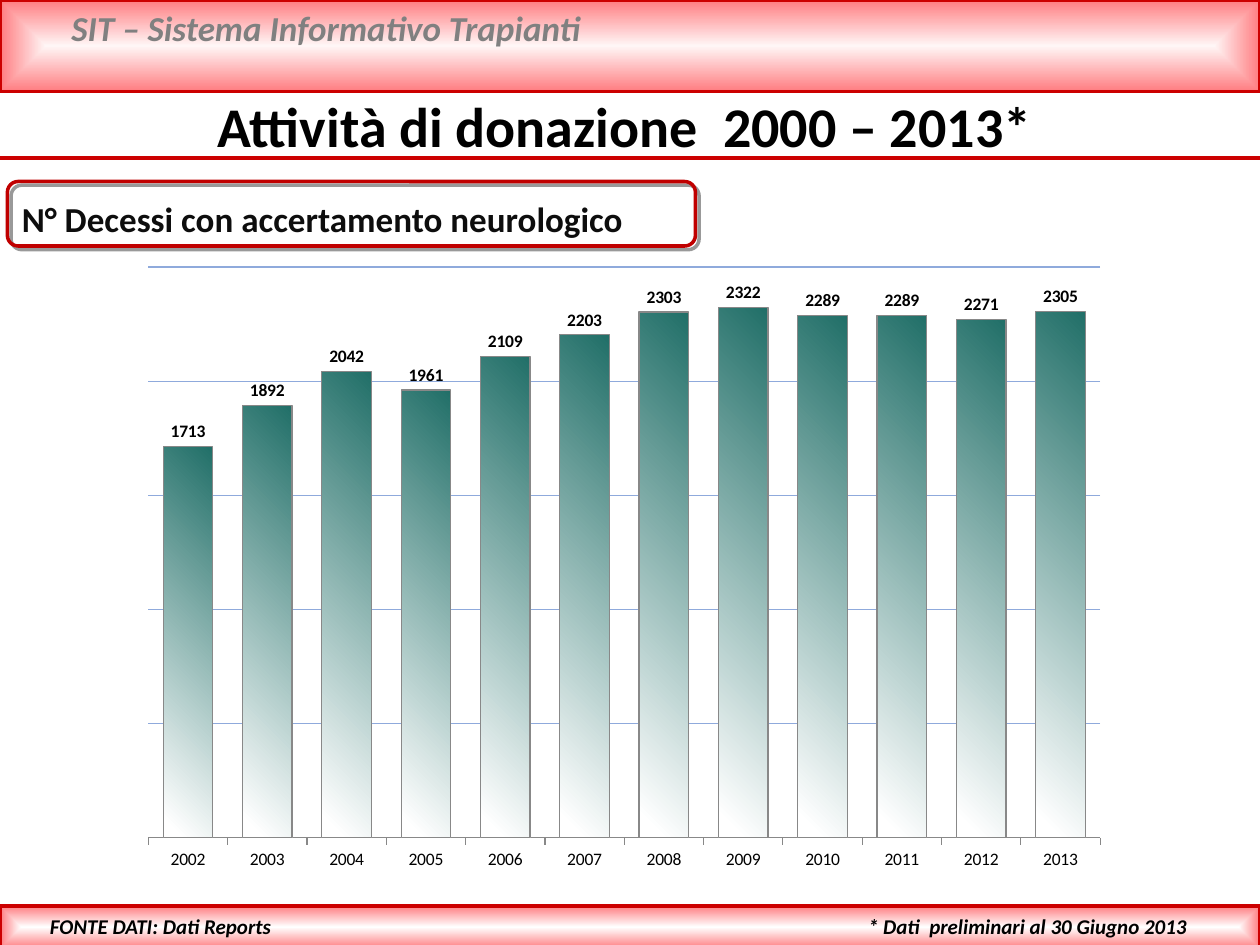
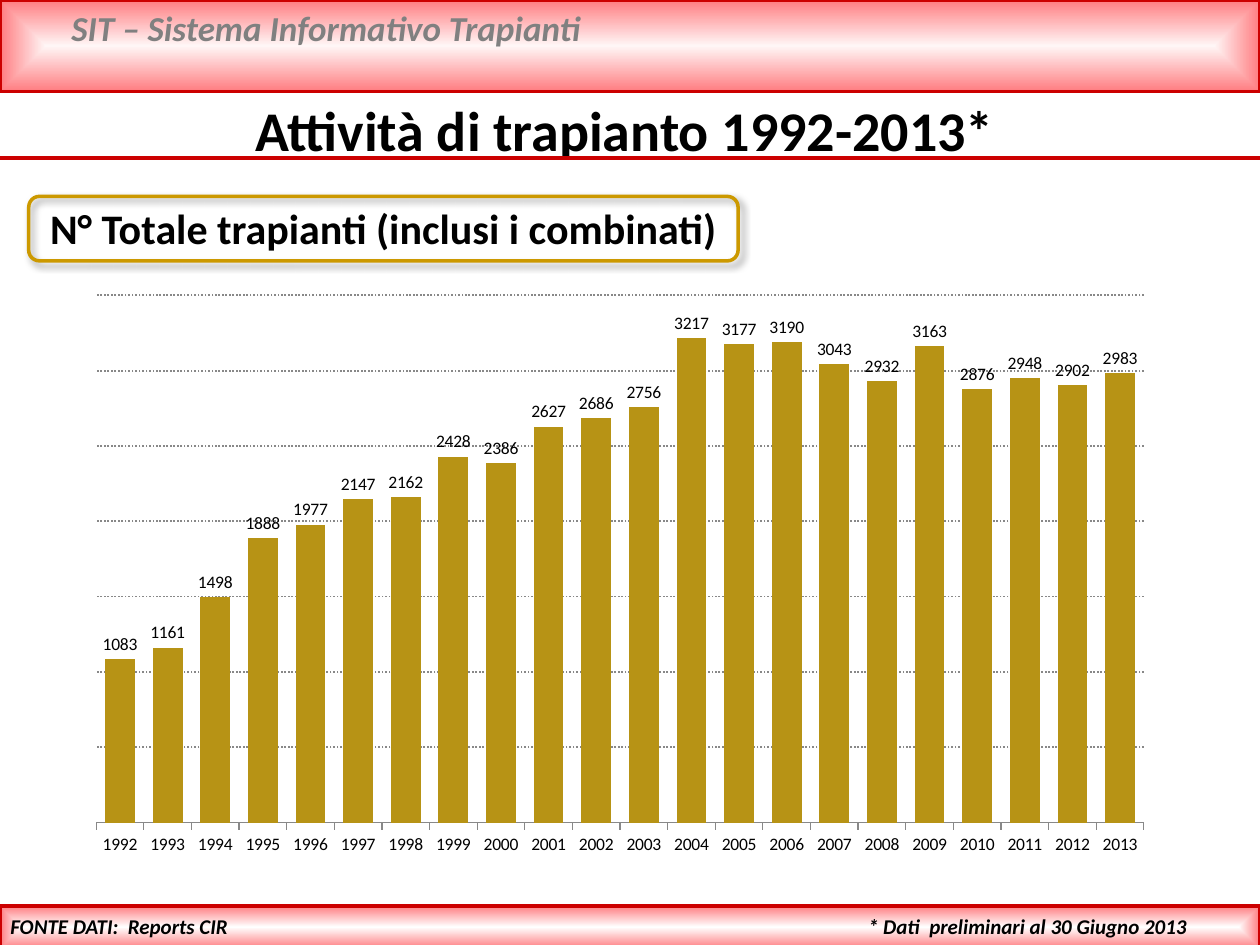
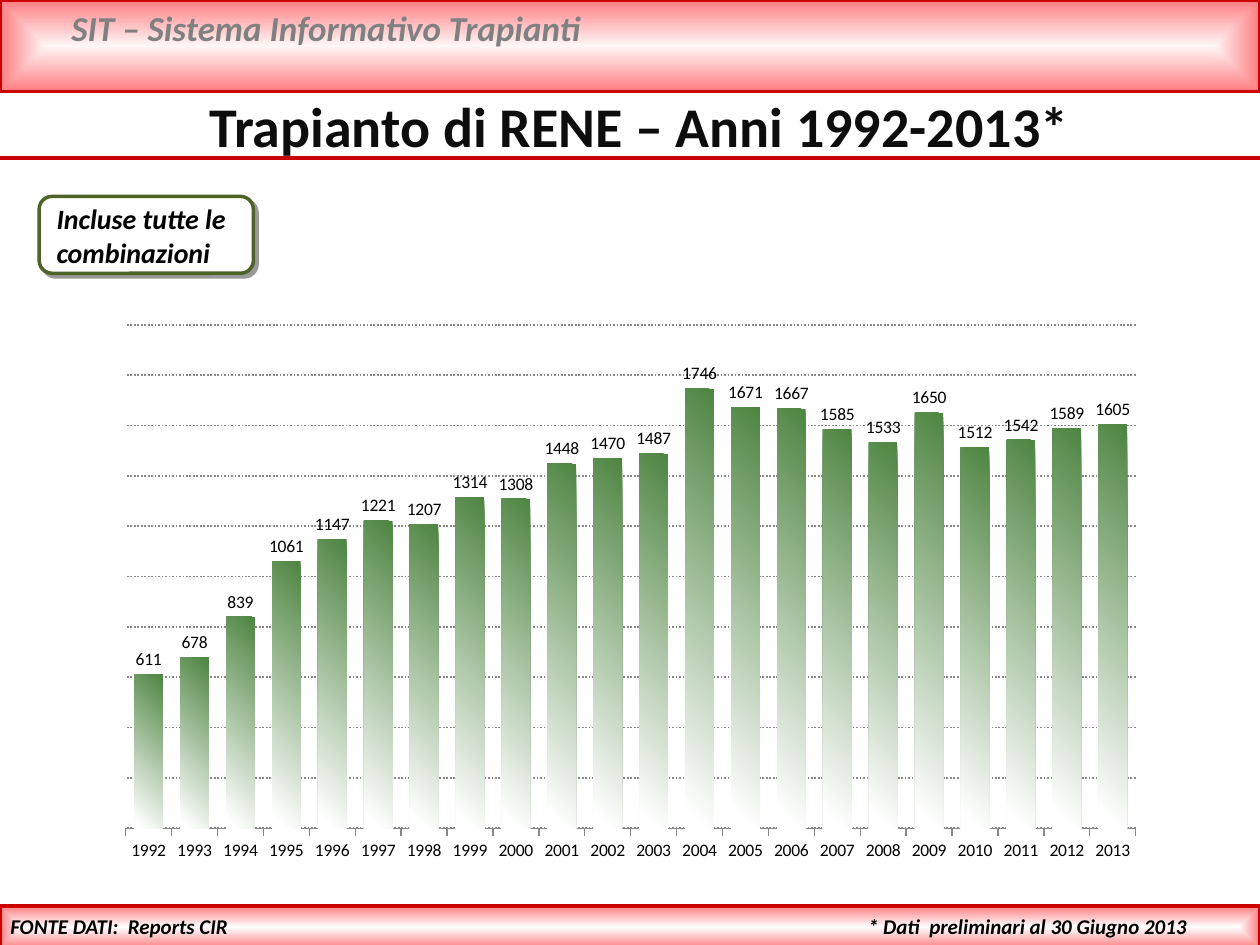
from lxml.etree import SubElement
from pptx import Presentation
from pptx.chart.data import CategoryChartData
from pptx.dml.color import RGBColor
from pptx.enum.chart import XL_CHART_TYPE as ChartType, XL_LABEL_POSITION as LabelPosition
from pptx.enum.chart import XL_TICK_MARK as TickMark
from pptx.enum.dml import MSO_LINE as Dash
from pptx.enum.shapes import MSO_CONNECTOR as Connector, MSO_SHAPE as Shape
from pptx.enum.text import MSO_ANCHOR as Anchor, MSO_AUTO_SIZE as AutoSize, PP_ALIGN as Align
from pptx.oxml import parse_xml
from pptx.oxml.ns import nsdecls, qn
from pptx.util import Cm, Pt

FONT = "Calibri"
COLORS = {
    "black": "000000", "ink": "0D0D0D", "white": "FFFFFF",
    "header": "808080", "red": "CC0000", "rose": "FF7C80", "blush": "FFF6F6",
    "frame_red": "C00000", "frame_gold": "CC9900", "frame_green": "4F6228",
    "teal": "216F68", "gold": "B79315", "green": "4E8542",
    "axis": "888888", "grid_blue": "8FAADC",
}
TITLE_ONLY = 5
PAGE_WIDTH, PAGE_HEIGHT = 25.4, 19.05


def rgb(name):
    return RGBColor.from_string(COLORS[name])


def place(at):
    return [Cm(length) for length in at]


def style_line(line, color, width):
    line.color.rgb = rgb(color)
    line.width = Pt(width)


def set_gradient(fill, start, end, end_position=1.0):
    fill.gradient()
    for stop, color, position in zip(fill.gradient_stops, (start, end), (0, end_position)):
        stop.color.rgb = rgb(color)
        stop.position = position


def write(frame, text, size, color="black", bold=True, italic=False, align=Align.LEFT):
    para = frame.paragraphs[0]
    para.alignment = align
    span = para.add_run()
    span.text = text
    font = span.font
    font.name, font.size, font.bold, font.italic = FONT, Pt(size), bold, italic
    font.color.rgb = rgb(color)


def add_text(page, at, text, size, wrap=True, anchor=Anchor.TOP, **style):
    frame = page.shapes.add_textbox(*place(at)).text_frame
    frame.word_wrap = wrap
    frame.vertical_anchor = anchor
    write(frame, text, size, **style)


def add_band(page, top, height, center):
    """Full-width band, light in the middle and rose at its edges."""
    band = page.shapes.add_shape(Shape.RECTANGLE, *place((0, top, PAGE_WIDTH, height)))
    band.shadow.inherit = False
    set_gradient(band.fill, center, "rose")
    style_line(band.line, "red", 2)
    gradient = band.fill._xPr.find(qn("a:gradFill"))
    gradient.remove(gradient.find(qn("a:lin")))
    gradient.append(parse_xml(
        f'<a:path {nsdecls("a")} path="shape">'
        '<a:fillToRect l="50000" t="50000" r="50000" b="50000"/></a:path>'))


def add_rule(page, top):
    rule = page.shapes.add_connector(Connector.STRAIGHT, *place((0, top, PAGE_WIDTH, top)))
    style_line(rule.line, "red", 2)
    SubElement(rule._element.spPr, qn("a:effectLst"))


def add_frame(page, at, color, blur=0, fill=None):
    """Rounded outline with a shadow to the lower right."""
    box = page.shapes.add_shape(Shape.ROUNDED_RECTANGLE, *place(at))
    box.shadow.inherit = False
    if fill:
        box.fill.solid()
        box.fill.fore_color.rgb = rgb(fill)
    else:
        box.fill.background()
    style_line(box.line, color, 2)
    box._element.spPr.find(qn("a:effectLst")).append(parse_xml(
        f'<a:outerShdw {nsdecls("a")} blurRad="{Pt(blur)}" dist="{Pt(3)}" dir="2700000" '
        f'algn="tl" rotWithShape="0"><a:srgbClr val="{COLORS["black"]}">'
        '<a:alpha val="40000"/></a:srgbClr></a:outerShdw>'))


def start_page(deck, title, title_at, source, source_at, title_color="black"):
    """Page with the shared bands, rule, header, footer and title."""
    page = deck.slides.add_slide(deck.slide_layouts[TITLE_ONLY])
    add_band(page, 0, 1.85, "blush")
    add_text(page, (1.19, 0, 22.81, 1.12), "SIT – Sistema Informativo Trapianti", 20,
             color="header", italic=True)
    add_band(page, 18.26, 0.86, "white")
    add_rule(page, 3.18)
    add_text(page, (17.25, 18.29, 8.15, 0.76), "* Dati  preliminari al 30 Giugno 2013", 12,
             italic=True)
    add_text(page, source_at, source, 12, wrap=False, italic=True, align=Align.RIGHT)

    heading = page.shapes.title
    heading.left, heading.top, heading.width, heading.height = place(title_at)
    heading.text_frame.auto_size = AutoSize.NONE
    heading.text_frame.vertical_anchor = Anchor.MIDDLE
    write(heading.text_frame, title, 32, color=title_color, align=Align.CENTER)
    return page


def set_plot_area(chart):
    layout = "".join(f'<c:{key} val="{value}"/>' for key, value in (
        ("layoutTarget", "inner"), ("xMode", "edge"), ("yMode", "edge"),
        ("x", 0.02), ("y", 0.02), ("w", 0.96), ("h", 0.9)))
    plot_area = chart._chartSpace.chart.plotArea
    for old in plot_area.findall(qn("c:layout")):
        plot_area.remove(old)
    plot_area.insert(0, parse_xml(
        f'<c:layout {nsdecls("c")}><c:manualLayout>{layout}</c:manualLayout></c:layout>'))


def add_columns(page, at, first_year, values, top_value, step, color, fade=True,
                outlined=False, bold_labels=False, grid=("axis", 1, Dash.ROUND_DOT)):
    data = CategoryChartData()
    data.categories = [str(first_year + index) for index in range(len(values))]
    data.add_series("Series 1", values)
    chart = page.shapes.add_chart(ChartType.COLUMN_CLUSTERED, *place(at), data).chart
    chart.has_legend = chart.has_title = False
    chart.font.name, chart.font.size = FONT, Pt(10)
    chart.font.color.rgb = rgb("black")
    set_plot_area(chart)

    # Axes
    style_line(chart.category_axis.format.line, "axis", 0.75)
    chart.category_axis.major_tick_mark = TickMark.OUTSIDE
    scale = chart.value_axis
    scale.visible = False
    scale.minimum_scale, scale.maximum_scale, scale.major_unit = 0, top_value, step
    scale.has_major_gridlines = True
    grid_color, grid_width, grid_dash = grid
    grid_line = scale.major_gridlines.format.line
    style_line(grid_line, grid_color, grid_width)
    grid_line.dash_style = grid_dash

    # Columns
    plot = chart.plots[0]
    plot.gap_width, plot.overlap, plot.vary_by_categories = 60, -20, False
    columns = plot.series[0].format
    if fade:
        set_gradient(columns.fill, color, "white", 0.96)
        columns.fill.gradient_angle = 225
    else:
        columns.fill.solid()
        columns.fill.fore_color.rgb = rgb(color)
    if outlined:
        style_line(columns.line, "axis", 0.75)
    else:
        columns.line.fill.background()

    # Value labels
    plot.has_data_labels = True
    labels = plot.data_labels
    labels.show_value = True
    labels.position = LabelPosition.OUTSIDE_END
    labels.font.name, labels.font.size, labels.font.bold = FONT, Pt(10), bold_labels
    labels.font.color.rgb = rgb("black")


def add_donation_page(deck):
    page = start_page(deck, "Attività di donazione  2000 – 2013*", (0, 1.7, 25.2, 1.63),
                      "FONTE DATI: Dati Reports", (0.69, 18.29, 5.03, 0.76))
    add_text(page, (0.19, 3.66, 13.8, 1.3), "N° Decessi con accertamento neurologico", 20,
             color="ink", anchor=Anchor.BOTTOM)
    add_frame(page, (0.15, 3.66, 13.87, 1.3), "frame_red")
    deaths = (1713, 1892, 2042, 1961, 2109, 2203, 2303, 2322, 2289, 2289, 2271, 2305)
    add_columns(page, (2.59, 5.13, 19.99, 12.78), 2002, deaths, 2500, 500, "teal",
                outlined=True, bold_labels=True, grid=("grid_blue", 0.75, Dash.SOLID))


def add_transplant_page(deck):
    page = start_page(deck, "Attività di trapianto 1992-2013*", (0, 1.78, 25.2, 1.63),
                      "FONTE DATI:  Reports CIR", (-0.1, 18.29, 4.95, 0.76))
    add_text(page, (0.76, 3.96, 14.12, 1.3), "N° Totale trapianti (inclusi i combinati)", 24)
    add_frame(page, (0.58, 3.96, 14.3, 1.3), "frame_gold", blur=4)
    transplants = (1083, 1161, 1498, 1888, 1977, 2147, 2162, 2428, 2386, 2627, 2686,
                   2756, 3217, 3177, 3190, 3043, 2932, 3163, 2876, 2948, 2902, 2983)
    add_columns(page, (1.5, 5.72, 22, 11.81), 1992, transplants, 3500, 500, "gold", fade=False)


def add_kidney_page(deck):
    page = start_page(deck, "Trapianto di RENE – Anni 1992-2013*", (2.77, 1.7, 20.24, 1.63),
                      "FONTE DATI:  Reports CIR", (-0.1, 18.29, 4.95, 0.76),
                      title_color="ink")
    add_frame(page, (0.79, 3.96, 4.32, 1.55), "frame_green", fill="white")
    add_text(page, (0.89, 3.94, 4.19, 1.63), "Incluse tutte le combinazioni", 16, italic=True)
    kidneys = (611, 678, 839, 1061, 1147, 1221, 1207, 1314, 1308, 1448, 1470,
               1487, 1746, 1671, 1667, 1585, 1533, 1650, 1512, 1542, 1589, 1605)
    add_columns(page, (2.11, 6.32, 21.21, 11.28), 1992, kidneys, 2000, 200, "green")


def main():
    deck = Presentation()
    deck.slide_width, deck.slide_height = place((PAGE_WIDTH, PAGE_HEIGHT))
    add_donation_page(deck)
    add_transplant_page(deck)
    add_kidney_page(deck)
    deck.save("out.pptx")


if __name__ == "__main__":
    main()
